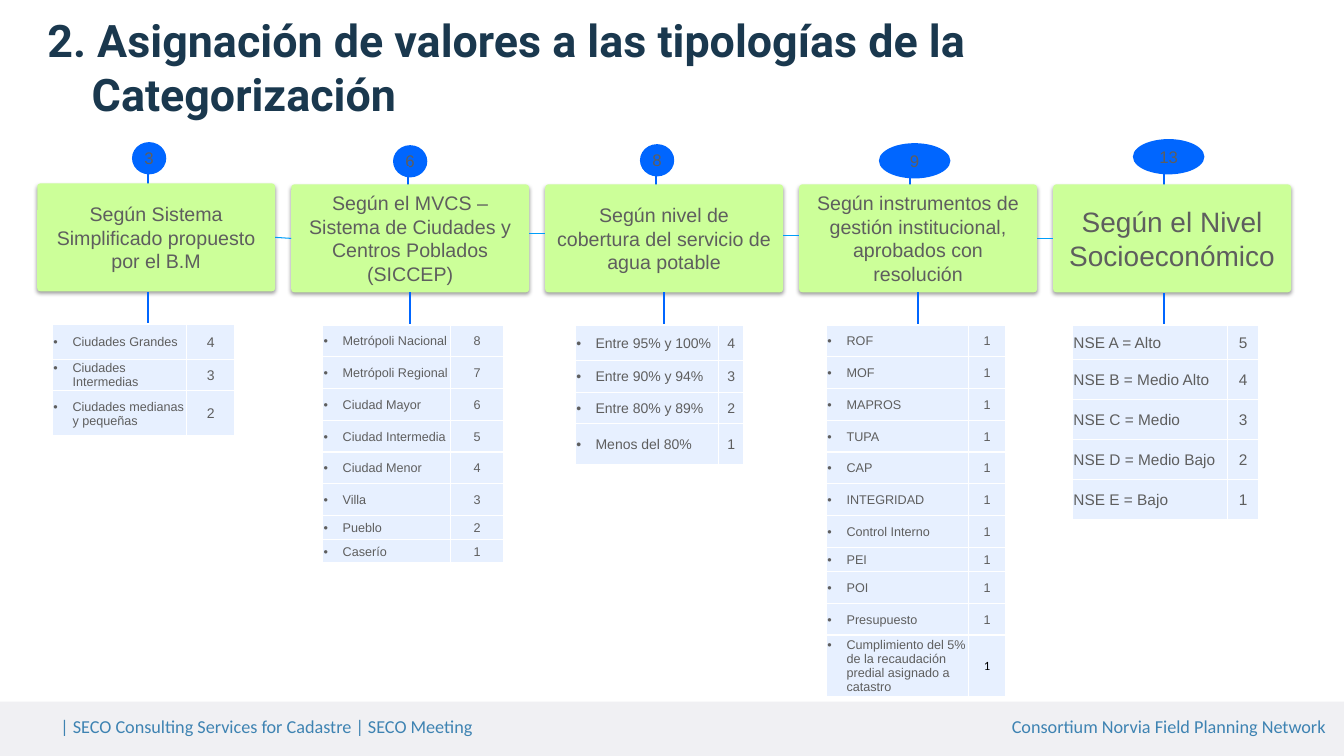
from lxml.etree import SubElement
from pptx import Presentation
from pptx.dml.color import RGBColor
from pptx.enum.shapes import MSO_CONNECTOR as LINK, MSO_SHAPE as SHAPE
from pptx.enum.text import MSO_ANCHOR as ANCHOR, MSO_AUTO_SIZE as AUTO, PP_ALIGN as ALIGN
from pptx.oxml.ns import qn
from pptx.util import Pt

PX = 4572
NAVY = RGBColor(0x1A, 0x38, 0x4E)
BLUE = RGBColor(0x00, 0x66, 0xFF)
SKY = RGBColor(0x00, 0x9E, 0xF9)
LIME = RGBColor(0xCC, 0xFF, 0x99)
GREY = RGBColor(0x5E, 0x5E, 0x5E)
PALE = RGBColor(0xE7, 0xF0, 0xFF)
BAND = RGBColor(0xF0, 0xF0, 0xF3)
STEEL = RGBColor(0x3E, 0x83, 0xB2)
WHITE = RGBColor(0xFF, 0xFF, 0xFF)
BLACK = RGBColor(0, 0, 0)

BOX_W, BOX_H, BOX_PITCH = 472, 214, 504
STEM_RISE, STEM_LENGTH = 36, 70
DROP_GAP, DROP_LENGTH = 2, 60
TABLE_DROP = 279

COLUMNS = [
    dict(top=364, title="Según Sistema Simplificado propuesto por el B.M", size=14,
         total="3", bubble=(188, -82, 68, 64), stem=220, drop=220, table=30,
         widths=(266, 96), heights=(70, 62, 90), label_size=9, value_size=10,
         rows=[("Ciudades Grandes", 4), ("Ciudades Intermedias", 3),
               ("Ciudades medianas y pequeñas", 2)]),
    dict(top=366, title="Según el MVCS – Sistema de Ciudades y Centros Poblados (SICCEP)", size=14,
         total="6", bubble=(202, -78, 68, 64), stem=232, drop=236, table=62,
         widths=(254, 106), heights=(63,) * 6 + (48, 46), label_size=9, value_size=9,
         rows=[("Metrópoli Nacional", 8), ("Metrópoli Regional", 7), ("Ciudad Mayor", 6),
               ("Ciudad Intermedia", 5), ("Ciudad Menor", 4), ("Villa", 3),
               ("Pueblo", 2), ("Caserío", 1)]),
    dict(top=366, title="Según nivel de cobertura del servicio de agua potable", size=14,
         total="8", bubble=(188, -80, 68, 64), stem=220, drop=236, table=60,
         widths=(284, 50), heights=(70, 63, 63, 80), label_size=10, value_size=10,
         rows=[("Entre 95% y 100%", 4), ("Entre 90% y 94%", 3),
               ("Entre 80% y 89%", 2), ("Menos del 80%", 1)]),
    dict(top=366, title="Según instrumentos de gestión institucional, aprobados con resolución", size=14,
         total="9", bubble=(158, -82, 142, 70), stem=220, drop=236, table=54,
         widths=(282, 74), heights=(63,) * 7 + (48, 63, 63, 120), label_size=9, value_size=9,
         rows=[(name, 1) for name in (
             "ROF", "MOF", "MAPROS", "TUPA", "CAP", "INTEGRIDAD", "Control Interno", "PEI",
             "POI", "Presupuesto",
             "Cumplimiento del 5% de la recaudación predial asignado a catastro")]),
    dict(top=366, title="Según el Nivel Socioeconómico", size=20,
         total="13", bubble=(158, -90, 142, 70), stem=220, drop=220, table=38,
         widths=(308, 62), heights=(69, 79, 79, 80, 79), label_size=11, value_size=11,
         rows=[("NSE A = Alto", 5), ("NSE B = Medio Alto", 4), ("NSE C = Medio", 3),
               ("NSE D = Medio Bajo", 2), ("NSE E = Bajo", 1)]),
]
LINK_YS = [470, 464, 468, 474]


def emu(*lengths):
    return [round(length * PX) for length in lengths]


def apply(target, formats):
    for key, value in formats.items():
        setattr(target, key, value)


def write(paragraph, text, size, color=GREY, font="Arial", align=ALIGN.LEFT, bold=False):
    run = paragraph.add_run()
    run.text = text
    paragraph.alignment = align
    apply(run.font, dict(size=Pt(size), name=font, bold=bold))
    run.font.color.rgb = color
    return run


def set_margins(frame, left, top, right, bottom):
    sides = ("left", "top", "right", "bottom")
    values = emu(left, top, right, bottom)
    apply(frame, {f"margin_{side}": value for side, value in zip(sides, values)})


def add_solid(slide, preset, box, color):
    solid = slide.shapes.add_shape(preset, *emu(*box))
    solid.shadow.inherit = False
    solid.fill.solid()
    solid.fill.fore_color.rgb = color
    solid.line.fill.background()
    apply(solid.text_frame, dict(word_wrap=True, vertical_anchor=ANCHOR.MIDDLE))
    return solid


def add_line(slide, start, end, color, width):
    line = slide.shapes.add_connector(LINK.STRAIGHT, *emu(*start, *end))
    line.line.color.rgb = color
    line.line.width = Pt(width)
    SubElement(line._element.spPr, qn("a:effectLst"))
    return line


def solid_fill(parent, color):
    SubElement(SubElement(parent, qn("a:solidFill")), qn("a:srgbClr"), val=str(color))


def add_title(slide, box):
    title = slide.shapes.title
    apply(title, dict(zip(("left", "top", "width", "height"), emu(*box))))
    frame = title.text_frame
    apply(frame, dict(word_wrap=True, auto_size=AUTO.NONE, vertical_anchor=ANCHOR.TOP))
    second = None
    for text in ("2. Asignación de valores a las tipologías de la", "Categorización"):
        second = frame.add_paragraph() if second is not None else frame.paragraphs[0]
        write(second, text, 32, NAVY, "Roboto", bold=True)
    second._p.get_or_add_pPr().set("marL", str(88 * PX))


def add_footer(slide, box):
    left, top, width, height = box
    add_solid(slide, SHAPE.RECTANGLE, box, BAND)
    for offset, text, align in (
            (114, "| SECO Consulting Services for Cadastre | SECO Meeting", ALIGN.LEFT),
            (1444, "Consortium Norvia Field Planning Network", ALIGN.RIGHT)):
        note = slide.shapes.add_textbox(*emu(left + offset, top + 22, 1192, 54)).text_frame
        apply(note, dict(word_wrap=True, vertical_anchor=ANCHOR.MIDDLE))
        set_margins(note, 6, 6, 6, 6)
        write(note.paragraphs[0], text, 13, STEEL, "Calibri", align)


def add_bubble(slide, box, total):
    bubble = add_solid(slide, SHAPE.OVAL, box, BLUE)
    set_margins(bubble.text_frame, 0, 0, 0, 0)
    run = write(bubble.text_frame.paragraphs[0], total, 12, align=ALIGN.CENTER)
    properties = run.font._element
    outline = SubElement(properties, qn("a:ln"), w="9525")
    solid_fill(outline, WHITE)
    properties.insert(0, outline)


def add_heading(slide, box, text, size):
    heading = add_solid(slide, SHAPE.ROUNDED_RECTANGLE, box, LIME)
    heading.adjustments[0] = 0.03
    effects = heading._element.spPr.find(qn("a:effectLst"))
    shadow = SubElement(effects, qn("a:outerShdw"), blurRad=str(Pt(3.1)), dist=str(Pt(1.6)),
                        dir="5400000", rotWithShape="0")
    tint = SubElement(shadow, qn("a:srgbClr"), val=str(BLACK))
    SubElement(tint, qn("a:alpha"), val="38000")
    write(heading.text_frame.paragraphs[0], text, size, align=ALIGN.CENTER)
    return heading


def format_cell(cell):
    cell.fill.solid()
    cell.fill.fore_color.rgb = PALE
    cell.vertical_anchor = ANCHOR.MIDDLE
    set_margins(cell, 2, 2, 2, 0)
    properties = cell._tc.get_or_add_tcPr()
    for position, side in enumerate(("lnL", "lnR", "lnT", "lnB")):
        border = SubElement(properties, qn(f"a:{side}"), w="12700")
        solid_fill(border, WHITE)
        properties.insert(position, border)


def add_bullet(paragraph):
    properties = paragraph._p.get_or_add_pPr()
    properties.set("marL", str(38 * PX))
    properties.set("indent", str(-38 * PX))
    SubElement(properties, qn("a:buFont"), typeface="Arial")
    SubElement(properties, qn("a:buChar"), char="•")


def add_scores(slide, left, top, column):
    widths, heights, rows = column["widths"], column["heights"], column["rows"]
    scores = slide.shapes.add_table(
        len(rows), 2, *emu(left, top, sum(widths), sum(heights))).table
    apply(scores, dict(first_row=False, horz_banding=False))
    for part, width in zip(scores.columns, widths):
        part.width = width * PX
    for part, height, (label, value) in zip(scores.rows, heights, rows):
        part.height = height * PX
        label_cell, value_cell = part.cells
        format_cell(label_cell)
        format_cell(value_cell)
        label_line = label_cell.text_frame.paragraphs[0]
        write(label_line, label, column["label_size"])
        if not label.startswith("NSE"):
            add_bullet(label_line)
        font, color = ("Calibri", BLACK) if label.startswith("Cumplimiento") else ("Arial", GREY)
        write(value_cell.text_frame.paragraphs[0], str(value), column["value_size"],
              color, font, ALIGN.CENTER)


def add_column(slide, left, column):
    top = column["top"]
    dx, dy, width, height = column["bubble"]
    add_bubble(slide, (left + dx, top + dy, width, height), column["total"])
    stem_x, stem_y = left + column["stem"], top - STEM_RISE
    add_line(slide, (stem_x, stem_y), (stem_x, stem_y + STEM_LENGTH), BLUE, 1.5)
    heading = add_heading(slide, (left, top, BOX_W, BOX_H), column["title"], column["size"])
    drop_x, drop_y = left + column["drop"], top + BOX_H + DROP_GAP
    drop = add_line(slide, (drop_x, drop_y), (drop_x, drop_y + DROP_LENGTH), BLUE, 1.5)
    if column["drop"] == BOX_W // 2:
        drop.begin_connect(heading, 2)
    add_scores(slide, left + column["table"], top + TABLE_DROP, column)
    return heading


def add_links(slide, left, headings):
    for index, y in enumerate(LINK_YS):
        start = left + index * BOX_PITCH + BOX_W
        link = add_line(slide, (start, y), (left + (index + 1) * BOX_PITCH, y), SKY, 0.75)
        if index in (0, 3):
            link.begin_connect(headings[index], 3)
            link.end_connect(headings[index + 1], 1)


def main():
    deck = Presentation()
    deck.slide_width, deck.slide_height = emu(2667, 1500)
    slide = deck.slides.add_slide(deck.slide_layouts[5])
    add_footer(slide, (0, 1392, 2667, 108))
    headings = [add_column(slide, 74 + index * BOX_PITCH, column)
                for index, column in enumerate(COLUMNS)]
    add_links(slide, 74, headings)
    add_title(slide, (74, 16, 2568, 144))
    deck.save("out.pptx")


if __name__ == "__main__":
    main()
